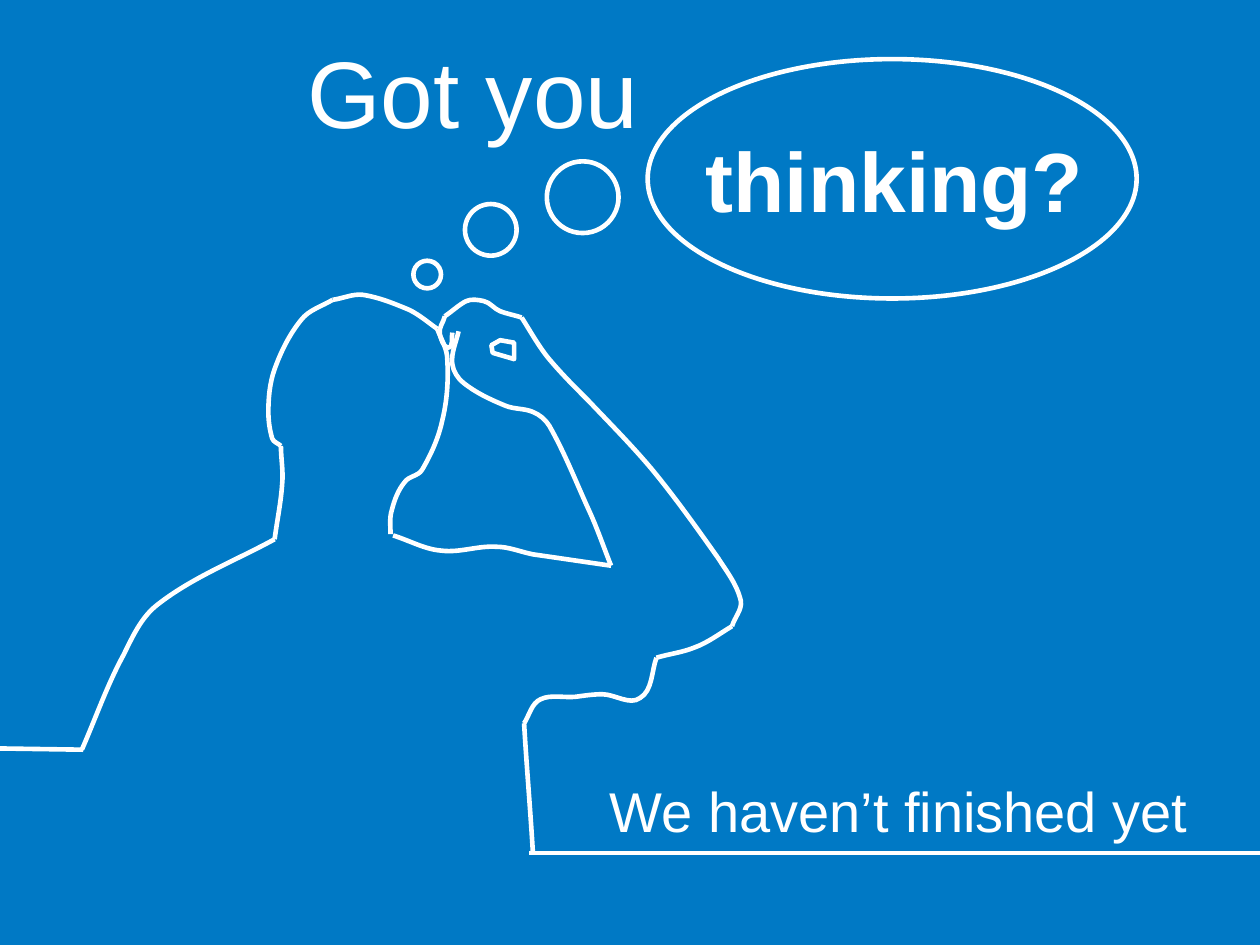
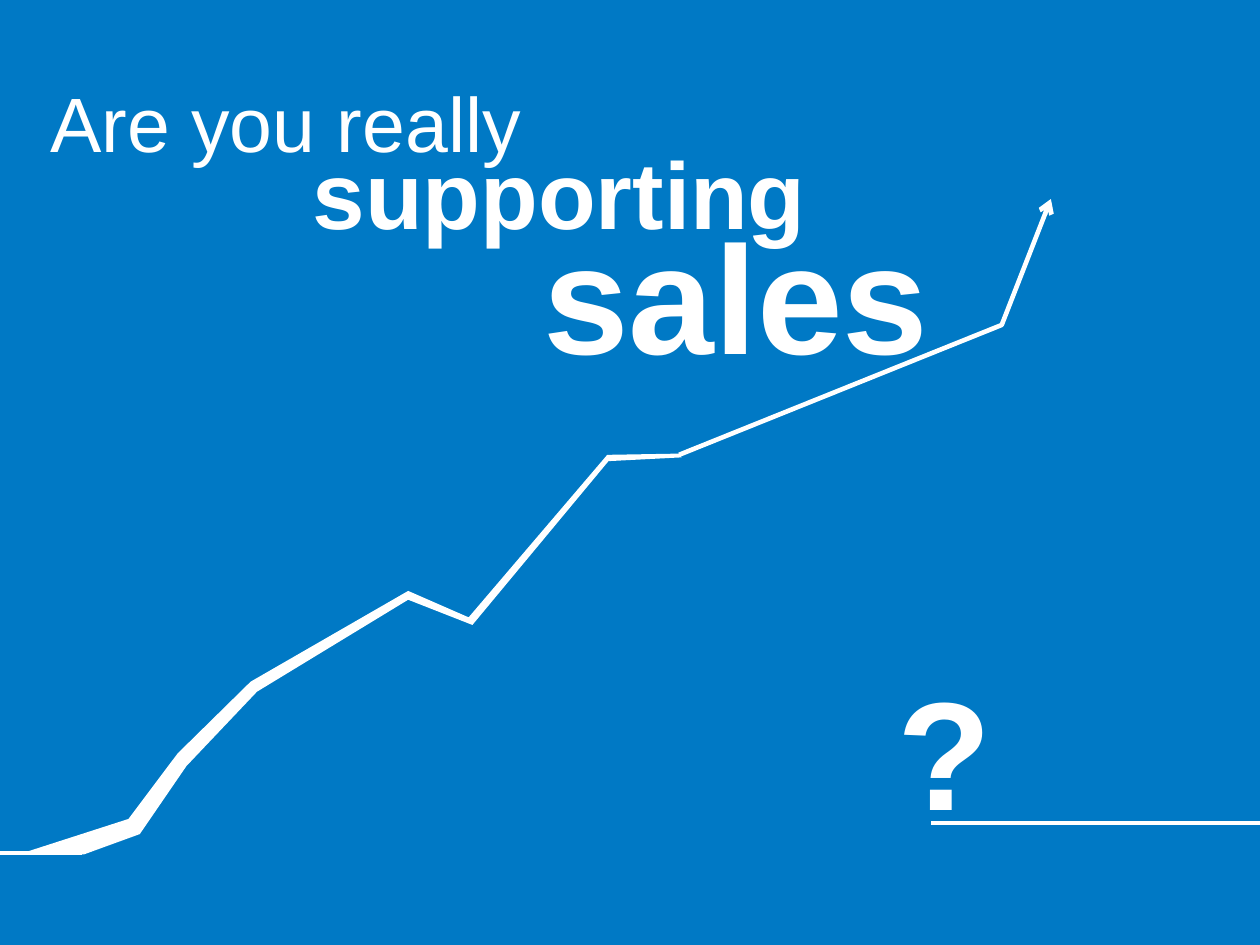
from math import dist
from typing import NamedTuple

from lxml import etree
from pptx import Presentation
from pptx.dml.color import RGBColor
from pptx.enum.shapes import MSO_CONNECTOR, MSO_SHAPE
from pptx.enum.text import MSO_ANCHOR, MSO_AUTO_SIZE, PP_ALIGN
from pptx.oxml.ns import qn
from pptx.util import Pt

STRAIGHT = MSO_CONNECTOR.STRAIGHT
OVAL = MSO_SHAPE.OVAL
MIDDLE = MSO_ANCHOR.MIDDLE
NO_AUTOFIT = MSO_AUTO_SIZE.NONE
LEFT, CENTER = PP_ALIGN.LEFT, PP_ALIGN.CENTER

BLUE, WHITE = "0079C5", "FFFFFF"
FONT = "Arial"
LINE_WIDTH = Pt(2.63)
GRID = Pt(0.72)  # one unit of the outline coordinates below
TITLE_ONLY_LAYOUT = 5

Point = tuple[float, float]


class Box(NamedTuple):
    left: float
    top: float
    width: float
    height: float

    def lengths(self) -> list[Pt]:
        return [Pt(value) for value in self]


class Label(NamedTuple):
    text: str
    box: Box
    size: int
    bold: bool = False
    align: PP_ALIGN = LEFT


class Rule(NamedTuple):
    start_x: float
    start_y: float
    end_x: float
    end_y: float


# Smooth strokes of the thinker; each name lists the points passed through
THINKER = {
    "chest": [(416, 574), (423, 677)],
    "elbow": [(581, 497), (551, 514), (521, 522)],
    "sleeve": [(521, 522), (508, 554), (478, 551), (457, 553), (429, 555), (416, 574)],
    "outer forearm": [(414, 252), (435, 284), (467, 318), (517, 372), (570, 443),
                      (588, 477), (581, 497)],
    "knuckles": [(353, 251), (370, 239), (384, 239), (397, 247), (414, 252)],
    "fingertip": [(359, 264), (356, 276), (349, 265), (353, 251)],
    "inner forearm": [(485, 449), (467, 404), (436, 338), (423, 327), (401, 322),
                      (368, 304), (359, 289), (364, 263)],
    "shoulder": [(312, 425), (350, 437), (394, 434), (423, 440), (485, 449)],
    "face": [(347, 261), (355, 285), (351, 334), (335, 373), (321, 383),
             (311, 405), (310, 424)],
    "crown": [(264, 238), (288, 234), (325, 246), (347, 261)],
    "back": [(65, 595), (98, 520), (125, 480), (218, 428)],
    "neck": [(218, 428), (224, 384), (223, 354)],
    "back of head": [(223, 354), (216, 348), (213, 327), (218, 293), (239, 254),
                     (264, 238)],
}
FIST_GAP = [(408, 272), (397, 270), (390, 274), (391, 280), (408, 285)]
THINKER_RULES = [Rule(0, 427.7, 47.5, 428.4), Rule(302.4, 487.4, 720, 487.4)]
THOUGHT_BUBBLES = [
    Box(236.2, 149, 15.8, 15.8),
    Box(265.7, 116.6, 29.5, 29.5),
    Box(312.5, 92.2, 41, 41),
    Box(370.1, 33.8, 279.4, 136.8),
]
THINKER_LABELS = [
    Label("Got you", Box(168.5, 12.2, 214.6, 79.2), 54),
    Label("thinking?", Box(373, 38.2, 276.5, 128.2), 48, True, CENTER),
    Label("We haven’t finished yet", Box(341.3, 423.4, 378.7, 79.2), 32),
]

ARROW = [(539, 361), (795, 258), (834, 158)]
GROWTH_BAND = [
    (482, 361), (372, 490), (324, 469), (199, 541), (141, 598), (102, 650),
    (15, 678), (67, 678), (111, 662), (148, 608), (204, 549), (324, 476),
    (375, 496), (483, 366), (541, 363), (539, 360),
]
SALES_RULES = [Rule(0, 487.4, 46.8, 487.4), Rule(532.1, 470.2, 720, 470.2)]
SALES_LABELS = [
    Label("Are you really", Box(21.6, 30.2, 356.4, 79.2), 44),
    Label("supporting", Box(148.3, 45.4, 342.7, 128.2), 54, True, CENTER),
    Label("sales", Box(249.1, 103, 342.7, 128.2), 88, True, CENTER),
    Label("?", Box(501.8, 379.4, 75.6, 97.2), 88, True, CENTER),
]


def color(value: str) -> RGBColor:
    return RGBColor.from_string(value)


def paint(target, value: str) -> None:
    """Give a fill one solid colour."""
    target.solid()
    target.fore_color.rgb = color(value)


def stroke(shape) -> None:
    shape.line.width = LINE_WIDTH
    paint(shape.line.fill, WHITE)


def draw_freeform(slide, points: list[Point], closed: bool = False):
    builder = slide.shapes.build_freeform(*points[0], scale=GRID)
    builder.add_line_segments(points[1:], close=closed)
    shape = builder.convert_to_shape()
    shape.shadow.inherit = False
    return shape


def draw_open_line(slide, points: list[Point], closed: bool = False):
    shape = draw_freeform(slide, points, closed)
    shape.fill.background()
    stroke(shape)
    return shape


def bezier_points(points: list[Point]) -> list[Point]:
    """Return the start, then two controls and an end for each smooth curve."""
    tangents = []
    for before, after in zip(points[:1] + points[:-1], points[1:] + points[-1:]):
        length = dist(before, after)
        tangents.append([(b - a) / length for a, b in zip(before, after)])
    result = [points[0]]
    for index, (start, end) in enumerate(zip(points, points[1:])):
        reach = dist(start, end) / 3
        (out_x, out_y), (in_x, in_y) = tangents[index:index + 2]
        result += [(start[0] + out_x * reach, start[1] + out_y * reach),
                   (end[0] - in_x * reach, end[1] - in_y * reach), end]
    return result


def draw_curve(slide, points: list[Point]) -> None:
    """Draw straight segments, then turn each three into one cubic curve."""
    shape = draw_open_line(slide, bezier_points(points))
    geometry = shape._element.find(".//" + qn("a:path"))
    segments = geometry.findall(qn("a:lnTo"))
    for curve, *others in zip(segments[::3], segments[1::3], segments[2::3]):
        curve.tag = qn("a:cubicBezTo")
        for other in others:
            curve.append(other[0])
            geometry.remove(other)


def draw_rule(slide, rule: Rule) -> None:
    connector = slide.shapes.add_connector(STRAIGHT, *[Pt(value) for value in rule])
    stroke(connector)
    etree.SubElement(connector._element.spPr, qn("a:effectLst"))


def draw_bubble(slide, box: Box) -> None:
    bubble = slide.shapes.add_shape(OVAL, *box.lengths())
    bubble.shadow.inherit = False
    bubble.fill.background()
    stroke(bubble)


def draw_arrow(slide, points: list[Point]) -> None:
    arrow = draw_open_line(slide, points)
    line = arrow._element.spPr.find(qn("a:ln"))
    etree.SubElement(line, qn("a:tailEnd"), type="arrow")


def draw_band(slide, points: list[Point]) -> None:
    band = draw_freeform(slide, points, closed=True)
    paint(band.fill, WHITE)
    band.line.fill.background()


def write(shape, text: str, *, size: int, bold: bool, align: PP_ALIGN) -> None:
    frame = shape.text_frame
    frame.word_wrap = True
    frame.auto_size = NO_AUTOFIT
    frame.vertical_anchor = MIDDLE
    paragraph = frame.paragraphs[0]
    paragraph.alignment = align
    spacing = etree.SubElement(paragraph._p.get_or_add_pPr(), qn("a:spcBef"))
    etree.SubElement(spacing, qn("a:spcPct"), val="50000")
    run = paragraph.add_run()
    run.text = text
    run.font.name = FONT
    run.font.size = Pt(size)
    run.font.bold = bold
    run.font.color.rgb = color(WHITE)


def draw_labels(slide, labels: list[Label]) -> None:
    """Put the first label in the title placeholder, the others in text boxes."""
    title = slide.shapes.title
    title.left, title.top, title.width, title.height = labels[0].box.lengths()
    boxes = [slide.shapes.add_textbox(*label.box.lengths()) for label in labels[1:]]
    for shape, label in zip([title, *boxes], labels):
        write(shape, label.text, size=label.size, bold=label.bold, align=label.align)


def build_thinking_slide(slide) -> None:
    for points in THINKER.values():
        draw_curve(slide, points)
    draw_open_line(slide, FIST_GAP, closed=True)
    for rule in THINKER_RULES:
        draw_rule(slide, rule)
    for box in THOUGHT_BUBBLES:
        draw_bubble(slide, box)
    draw_labels(slide, THINKER_LABELS)


def build_sales_slide(slide) -> None:
    draw_arrow(slide, ARROW)
    draw_band(slide, GROWTH_BAND)
    for rule in SALES_RULES:
        draw_rule(slide, rule)
    draw_labels(slide, SALES_LABELS)


def main() -> None:
    presentation = Presentation()
    presentation.slide_width, presentation.slide_height = Pt(720), Pt(540)
    paint(presentation.slide_master.background.fill, BLUE)
    layout = presentation.slide_layouts[TITLE_ONLY_LAYOUT]
    for build in (build_thinking_slide, build_sales_slide):
        build(presentation.slides.add_slide(layout))
    presentation.save("out.pptx")


if __name__ == "__main__":
    main()
